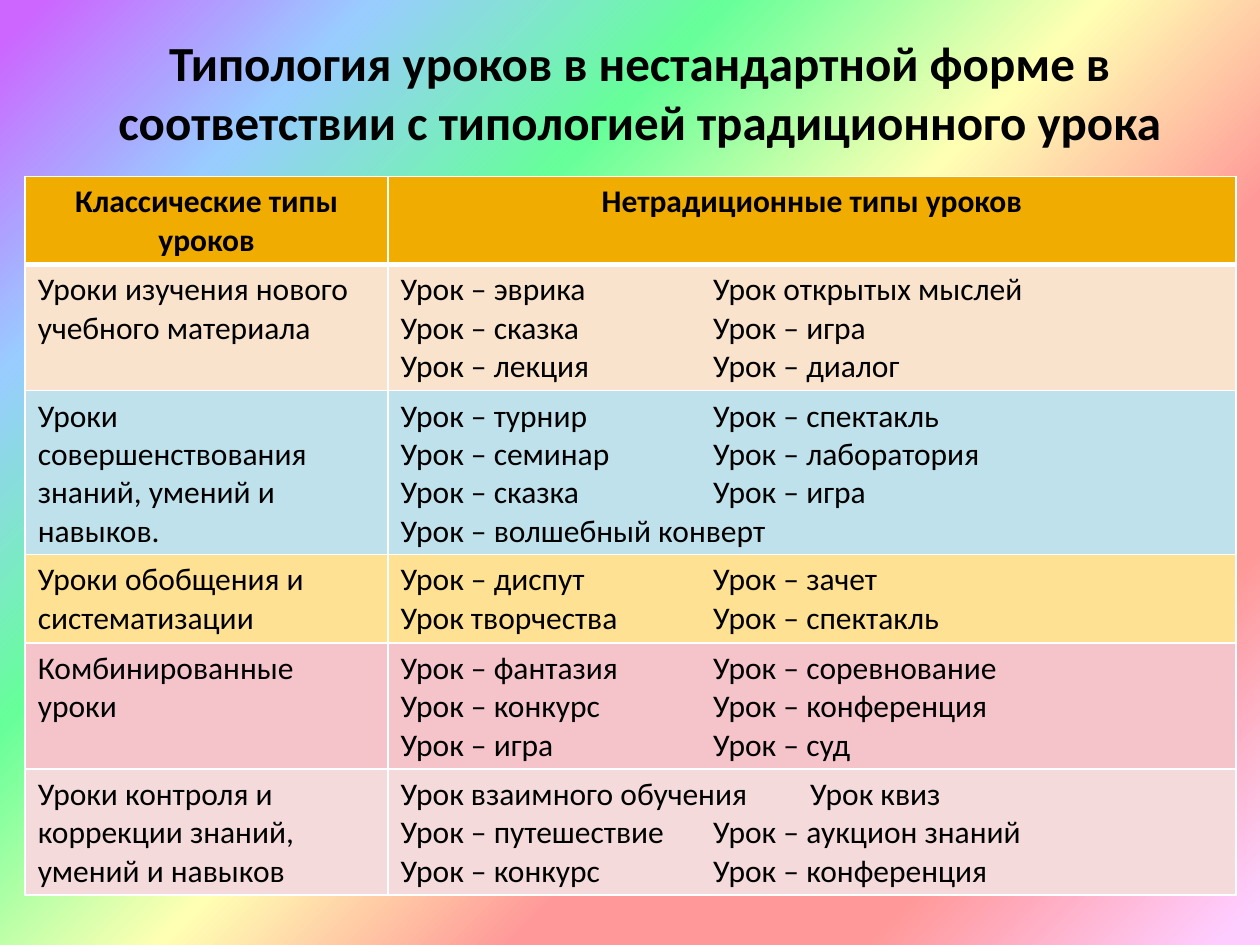
from lxml.etree import SubElement
from pptx import Presentation
from pptx.dml.color import RGBColor
from pptx.enum.text import PP_ALIGN
from pptx.oxml.ns import qn
from pptx.util import Inches, Pt

COLORS = {
    "text": "000000", "line": "FFFFFF", "head": "F0AD00", "new": "F9E3CC",
    "skill": "BFE1EB", "review": "FFE193", "mixed": "F5C4CB", "check": "F4DADA",
}
STOPS = {2: "CC66FF", 17: "99CCFF", 33: "66FF99", 50: "FFFFB3",
         66: "FF9999", 82: "FF9999", 98: "FFCCFF"}
TABS = (2.48, 3.25)
ROWS = [
    ("head", 2, "Классические типы уроков", ["Нетрадиционные типы уроков"]),
    ("new", 3, "Уроки изучения нового учебного материала", [
        "Урок – эврика\tУрок открытых мыслей",
        "Урок – сказка\tУрок – игра",
        "Урок – лекция\tУрок – диалог"]),
    ("skill", 4, "Уроки совершенствования знаний, умений и навыков.", [
        "Урок – турнир\tУрок – спектакль",
        "Урок – семинар\tУрок – лаборатория",
        "Урок – сказка\tУрок – игра",
        "Урок – волшебный конверт"]),
    ("review", 2, "Уроки обобщения и систематизации", [
        "Урок – диспут\tУрок – зачет",
        "Урок творчества\tУрок – спектакль"]),
    ("mixed", 3, "Комбинированные уроки", [
        "Урок – фантазия\tУрок – соревнование",
        "Урок – конкурс\tУрок – конференция",
        "Урок – игра\tУрок – суд"]),
    ("check", 3, "Уроки контроля и коррекции знаний, умений и навыков", [
        "Урок взаимного обучения\tУрок квиз",
        "Урок – путешествие\tУрок – аукцион знаний",
        "Урок – конкурс\tУрок – конференция"]),
]


def write(frame, lines, size, bold):
    frame.text = "\n".join(lines)
    for para in frame.paragraphs:
        if "\t" in para.text:
            tabs = SubElement(para._p.get_or_add_pPr(), qn("a:tabLst"))
            for stop in TABS:
                SubElement(tabs, qn("a:tab"), pos=str(Inches(stop)), algn="l")
        para.alignment = PP_ALIGN.CENTER if bold else PP_ALIGN.LEFT
        font = para.font
        font.name, font.size, font.bold = "Calibri", Pt(size), bold
        font.color.rgb = RGBColor.from_string(COLORS["text"])


deck = Presentation()
deck.slide_width, deck.slide_height = Inches(10), Inches(7.5)
slide = deck.slides.add_slide(deck.slide_layouts[6])

back = slide.background.fill
back.gradient()
back.gradient_angle = 315
stops = slide.element.find(".//" + qn("a:gsLst"))
stops.clear()
for place, color in STOPS.items():
    stop = SubElement(stops, qn("a:gs"), pos=str(place * 1000))
    SubElement(stop, qn("a:srgbClr"), val=color)

title = slide.shapes.add_textbox(Inches(0.35), Inches(0.21), Inches(9.45), Inches(1.04))
title.text_frame.word_wrap = True
write(title.text_frame, [
    "Типология уроков в нестандартной форме в соответствии с типологией традиционного урока"],
    28, True)

table = slide.shapes.add_table(
    len(ROWS), 2, Inches(0.2), Inches(1.4), Inches(9.61), Inches(5.7)).table
for col, width in zip(table.columns, (2.88, 6.73)):
    col.width = Inches(width)
for row, (kind, count, name, forms) in zip(table.rows, ROWS):
    row.height = Inches(0.1 + 0.3 * count)
    for cell, lines in zip(row.cells, ([name], forms)):
        if kind == "head":
            edge = SubElement(cell._tc.get_or_add_tcPr(), qn("a:lnB"), w=str(Pt(3)))
            paint = SubElement(edge, qn("a:solidFill"))
            SubElement(paint, qn("a:srgbClr"), val=COLORS["line"])
        cell.fill.solid()
        cell.fill.fore_color.rgb = RGBColor.from_string(COLORS[kind])
        write(cell.text_frame, lines, 18, kind == "head")

deck.save("out.pptx")
